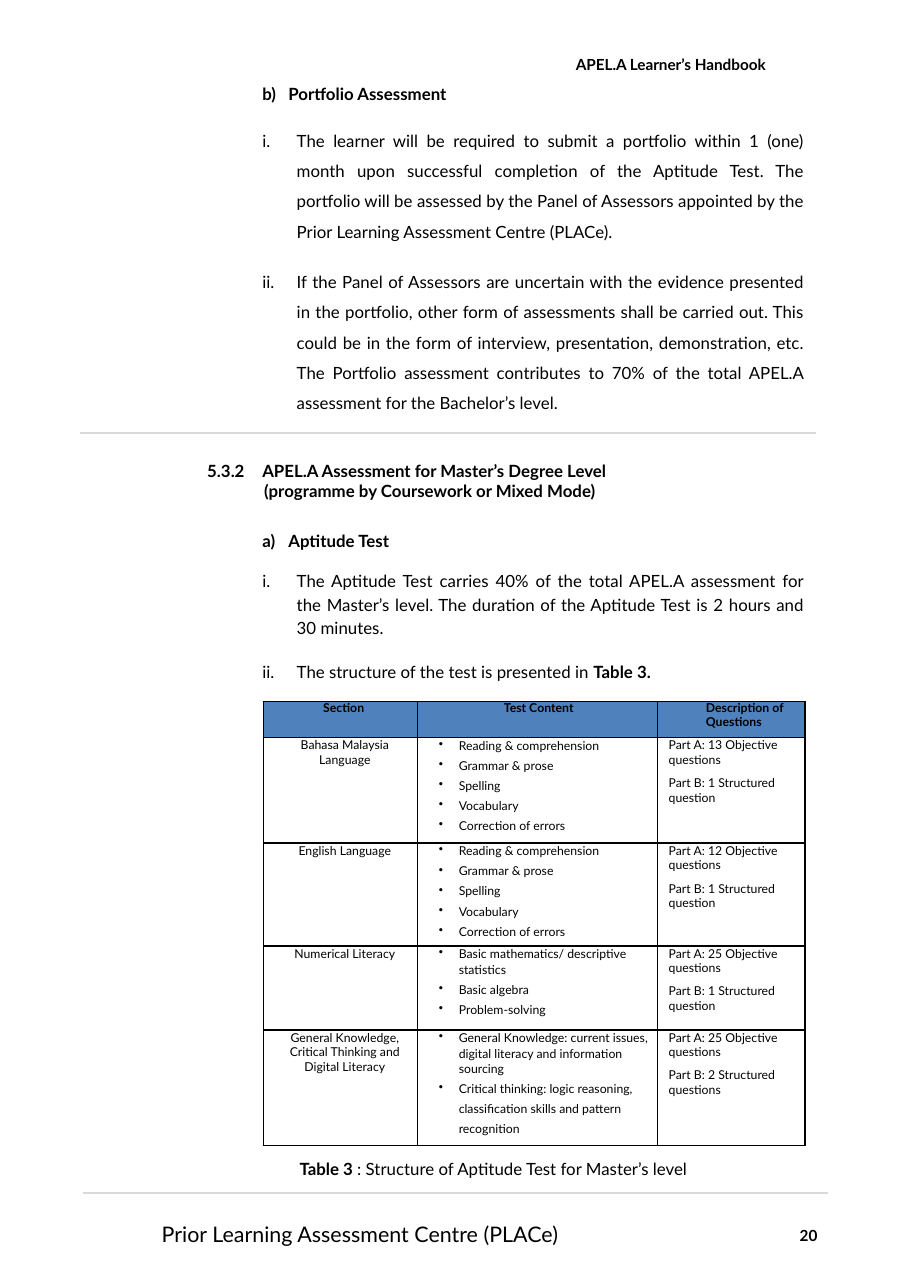
from dataclasses import dataclass

from lxml.etree import SubElement
from pptx import Presentation
from pptx.dml.color import RGBColor
from pptx.enum.shapes import MSO_CONNECTOR
from pptx.enum.text import MSO_ANCHOR, MSO_AUTO_SIZE, PP_ALIGN
from pptx.oxml.ns import qn
from pptx.util import Pt


@dataclass(frozen=True)
class Theme:
    font: str = "Lato"
    ink: RGBColor = RGBColor(0, 0, 0)
    rule: RGBColor = RGBColor(0xD9, 0xD9, 0xD9)
    header_fill: RGBColor = RGBColor(0x4F, 0x81, 0xBD)
    footer: int = 14
    body: int = 11
    running: int = 10
    cell: int = 8


THEME = Theme()
LIST_LEFT, LIST_WIDTH = 171.4, 354.2

PORTFOLIO_STEPS = [
    ["The learner will be required to submit a portfolio within 1 (one) month upon "
     "successful completion of the Aptitude Test. The portfolio will be assessed by the "
     "Panel of Assessors appointed by the Prior Learning Assessment Centre (PLACe)."],
    ["If the Panel of Assessors are uncertain with the evidence presented in the portfolio, "
     "other form of assessments shall be carried out. This could be in the form of interview, "
     "presentation, demonstration, etc. The Portfolio assessment contributes to 70% of the "
     "total APEL.A assessment for the Bachelor’s level."],
]
APTITUDE_STEPS = [
    ["The Aptitude Test carries 40% of the total APEL.A assessment for the Master’s level. "
     "The duration of the Aptitude Test is 2 hours and 30 minutes."],
    ["The structure of the test is presented in ", "Table 3."],
]

COLUMN_WIDTHS = [100.8, 157, 96.4]
ROW_HEIGHTS = [23.6, 68.8, 67.2, 54.9, 75.7]
HEADERS = [("Section", 39.2), ("Test Content", 56.5), ("Description of Questions", 31.5)]
LANGUAGE_TOPICS = ["Reading & comprehension", "Grammar & prose", "Spelling", "Vocabulary",
                   "Correction of errors"]
SECTIONS = [
    (["Bahasa Malaysia", "Language"], LANGUAGE_TOPICS,
     ["Part A: 13 Objective questions", "Part B: 1 Structured question"]),
    (["English Language"], LANGUAGE_TOPICS,
     ["Part A: 12 Objective questions", "Part B: 1 Structured question"]),
    (["Numerical Literacy"],
     ["Basic mathematics/ descriptive statistics", "Basic algebra", "Problem-solving"],
     ["Part A: 25 Objective questions", "Part B: 1 Structured question"]),
    (["General Knowledge, Critical Thinking and Digital Literacy"],
     ["General Knowledge: current issues, digital literacy and information sourcing",
      "Critical thinking: logic reasoning, classification skills and pattern recognition"],
     ["Part A: 25 Objective questions", "Part B: 2 Structured questions"]),
]


def add_tab(paragraph, position):
    tabs = SubElement(paragraph._p.get_or_add_pPr(), qn("a:tabLst"))
    SubElement(tabs, qn("a:tab"), pos=str(Pt(position)), algn="l")


def indent(paragraph, left, first=0):
    properties = paragraph._p.get_or_add_pPr()
    properties.set("marL", str(Pt(left)))
    properties.set("indent", str(Pt(first)))


def add_bullet(paragraph, tag, **attributes):
    SubElement(paragraph._p.get_or_add_pPr(), qn(tag), **attributes)


def style(paragraph, size, bold=False, align=PP_ALIGN.LEFT, spacing=1.0, before=0):
    """Format a paragraph; a float spacing counts lines, a Pt spacing is exact."""
    paragraph.alignment = align
    paragraph.line_spacing = spacing
    paragraph.space_before = Pt(before)
    font = paragraph.font
    font.name, font.size, font.bold = THEME.font, Pt(size), bold
    font.color.rgb = THEME.ink


def paragraphs_for(frame, items):
    """Yield one paragraph per item, starting with the paragraph already there."""
    for number, item in enumerate(items):
        yield number, item, frame.add_paragraph() if number else frame.paragraphs[0]


def prepare(shape, left, top, width, height):
    shape.left, shape.top, shape.width, shape.height = map(Pt, (left, top, width, height))
    frame = shape.text_frame
    frame.margin_left = frame.margin_right = frame.margin_top = frame.margin_bottom = 0
    frame.word_wrap = True
    frame.auto_size = MSO_AUTO_SIZE.NONE
    frame.vertical_anchor = MSO_ANCHOR.TOP
    return frame


def add_label(slide, box, text, size, **looks):
    paragraph = prepare(slide.shapes.add_textbox(0, 0, 0, 0), *box).paragraphs[0]
    paragraph.text = text
    style(paragraph, size, **looks)
    return paragraph


def add_subheading(slide, top, letter, text):
    paragraph = add_label(slide, (LIST_LEFT, top, 328, 13.2), "", THEME.body)
    paragraph.text = f"{letter})\t{text}"
    paragraph._p.remove(paragraph._p.pPr)
    add_tab(paragraph, 17)
    style(paragraph, THEME.body, bold=True, spacing=Pt(13.2))


def fill_heading(title):
    frame = prepare(title, 135.4, 301, 439, 39.6)
    lines = ["5.3.2\tAPEL.A Assessment for Master’s Degree Level",
             "(programme by Coursework or Mixed Mode)"]
    for number, line, paragraph in paragraphs_for(frame, lines):
        paragraph.text = line
        indent(paragraph, 37.2 if number else 0)
        add_tab(paragraph, 32)
        style(paragraph, THEME.body, bold=True, spacing=Pt(13.2))


def fill_steps(body, top, height, steps, spacing):
    """Write roman-numbered steps; the second part of a step is bold."""
    frame = prepare(body, LIST_LEFT, top, LIST_WIDTH, height)
    for number, parts, paragraph in paragraphs_for(frame, steps):
        for part_number, part in enumerate(parts):
            run = paragraph.add_run()
            run.text = part
            if part_number:
                run.font.bold = True
        indent(paragraph, 22.5, -22.5)
        add_bullet(paragraph, "a:buAutoNum", type="romanLcPeriod")
        style(paragraph, THEME.body, align=PP_ALIGN.JUSTIFY, spacing=spacing,
              before=13.2 if number else 0)


def add_rule(slide, left, right, y):
    rule = slide.shapes.add_connector(MSO_CONNECTOR.STRAIGHT, Pt(left), Pt(y), Pt(right), Pt(y))
    rule.line.color.rgb = THEME.rule
    rule.line.width = Pt(1.5)
    SubElement(rule._element.spPr, qn("a:effectLst"))


def frame_cell(cell, fill=None):
    cell.margin_left = cell.margin_right = cell.margin_top = cell.margin_bottom = 0
    properties = cell._tc.get_or_add_tcPr()
    for side in ("a:lnL", "a:lnR", "a:lnT", "a:lnB"):
        border = SubElement(properties, qn(side), w=str(Pt(1)))
        SubElement(SubElement(border, qn("a:solidFill")), qn("a:srgbClr"), val=str(THEME.ink))
    if fill is None:
        cell.fill.background()
    else:
        cell.fill.solid()
        cell.fill.fore_color.rgb = fill


def fill_cell(cell, lines, left, bulleted=False, align=PP_ALIGN.LEFT, gap=0):
    frame_cell(cell)
    for number, line, paragraph in paragraphs_for(cell.text_frame, lines):
        paragraph.text = line
        indent(paragraph, left, -13 if bulleted else 0)
        spacing = 1.0
        if bulleted:
            add_bullet(paragraph, "a:buChar", char="•")
            spacing = Pt(13.1) if number else 1.05
        style(paragraph, THEME.cell, align=align, spacing=spacing, before=gap if number else 0)


def add_test_table(slide):
    table = slide.shapes.add_table(len(ROW_HEIGHTS), len(COLUMN_WIDTHS), Pt(172), Pt(458.6),
                                   Pt(sum(COLUMN_WIDTHS)), Pt(sum(ROW_HEIGHTS))).table
    table.first_row = table.horz_banding = False
    for column, width in zip(table.columns, COLUMN_WIDTHS):
        column.width = Pt(width)
    for row, height in zip(table.rows, ROW_HEIGHTS):
        row.height = Pt(height)
    for column, (header, left) in enumerate(HEADERS):
        cell = table.cell(0, column)
        frame_cell(cell, THEME.header_fill)
        paragraph = cell.text_frame.paragraphs[0]
        paragraph.text = header
        indent(paragraph, left)
        style(paragraph, THEME.cell, bold=True, spacing=0.92)
    for row, (section, topics, questions) in enumerate(SECTIONS, 1):
        fill_cell(table.cell(row, 0), section, 6, align=PP_ALIGN.CENTER)
        fill_cell(table.cell(row, 1), topics, 27, bulleted=True)
        fill_cell(table.cell(row, 2), questions, 7.2, gap=5.5)


def add_caption(slide):
    caption = add_label(slide, (195.8, 755.3, 288, 13.7), "", THEME.body, spacing=Pt(15.4))
    for text, bold in (("Table 3 ", True), (": Structure of Aptitude Test for Master’s level", False)):
        run = caption.add_run()
        run.text, run.font.bold = text, bold


def main():
    deck = Presentation()
    deck.slide_width, deck.slide_height = Pt(594.72), Pt(841.68)
    slide = deck.slides.add_slide(deck.slide_layouts[3])
    heading, portfolio, aptitude = slide.placeholders

    add_label(slide, (183.6, 36, 316.8, 24.5), "APEL.A Learner’s Handbook", THEME.running,
              bold=True, align=PP_ALIGN.RIGHT, spacing=Pt(12))
    add_subheading(slide, 54.7, "b", "Portfolio Assessment")
    fill_steps(portfolio, 78.5, 217.4, PORTFOLIO_STEPS, 1.5)
    add_rule(slide, 52.6, 533.5, 283)

    fill_heading(heading)
    add_subheading(slide, 347, "a", "Aptitude Test")
    fill_steps(aptitude, 370.8, 74.2, APTITUDE_STEPS, Pt(15.4))
    add_test_table(slide)
    add_caption(slide)

    add_rule(slide, 54, 541.4, 779.8)
    add_label(slide, (39.6, 794.9, 325.4, 18.7), "Prior Learning Assessment Centre (PLACe)",
              THEME.footer, align=PP_ALIGN.RIGHT, spacing=Pt(19.6))
    add_label(slide, (496.8, 799.2, 37.4, 13), "20", THEME.running,
              bold=True, align=PP_ALIGN.RIGHT, spacing=Pt(14))
    deck.save("out.pptx")


if __name__ == "__main__":
    main()
